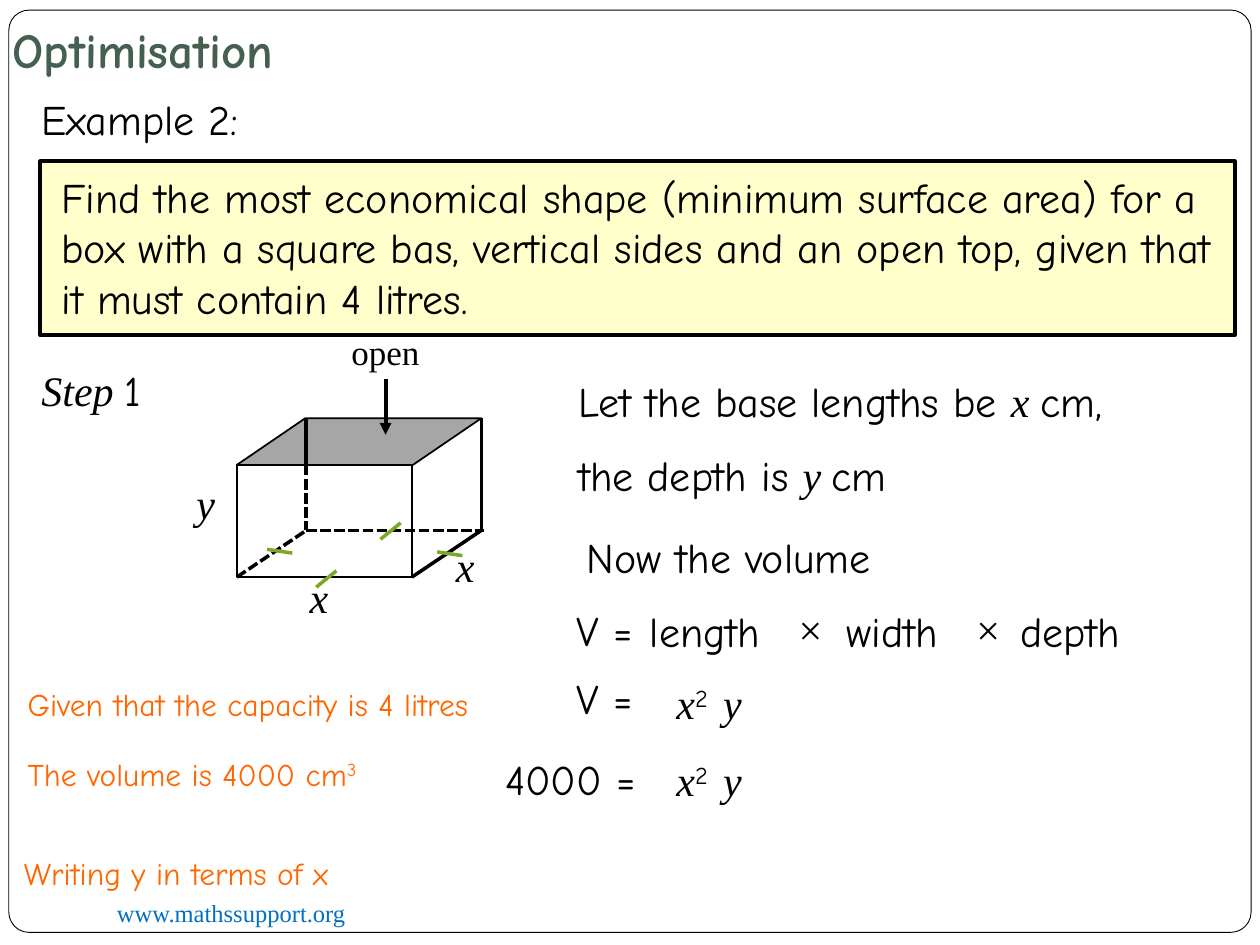
import pptx
import pptx.util
import pptx.dml.color
import pptx.enum.dml
import pptx.enum.shapes
import pptx.enum.text
import pptx.oxml
import pptx.oxml.ns

PX = 9144  # 100 px to the inch
SHAPES = pptx.enum.shapes.MSO_SHAPE
COLOURS = {"ink": "000000", "paper": "FFFFFF", "title": "455F51", "note": "FF6600",
           "link": "0070C0", "problem": "FFFFCC", "lid": "A6A6A6", "tick": "7CA827"}
PLAIN, SERIF = "Comic Neue", "Times New Roman"
STYLES = {
    "title": ({"name": PLAIN, "size": 28, "bold": True}, "title"),
    "plain": ({"name": PLAIN, "size": 24}, "ink"),
    "power": ({"name": PLAIN, "size": 24}, "ink"),
    "maths": ({"name": SERIF, "size": 24, "italic": True}, "ink"),
    "times": ({"name": SERIF, "size": 24}, "ink"),
    "label": ({"name": SERIF, "size": 20}, "ink"),
    "note": ({"name": PLAIN, "size": 18}, "note"),
    "note power": ({"name": PLAIN, "size": 18}, "note"),
    "link": ({"name": SERIF, "size": 14}, "link"),
}


def colour(name):
    return pptx.dml.color.RGBColor.from_string(COLOURS[name])


def emu(*lengths):
    return [pptx.util.Emu(length * PX) for length in lengths]


def write(frame, *spans):
    """Fill the first paragraph with (words, style) pairs."""
    para = frame.paragraphs[0]
    para.alignment = pptx.enum.text.PP_ALIGN.LEFT
    for words, style in spans:
        span = para.add_run()
        span.text = words
        formats, ink = STYLES[style]
        for name, value in formats.items():
            setattr(span.font, name, pptx.util.Pt(value) if name == "size" else value)
        span.font.color.rgb = colour(ink)
        if style.endswith("power"):
            span.font._element.set("baseline", "30000")


def add_text(page, left, top, width, height, *spans, wrap=True):
    box = page.shapes.add_textbox(*emu(left, top, width, height))
    box.text_frame.word_wrap = wrap
    write(box.text_frame, *spans)
    return box


def add_block(page, kind, box, fill, weight):
    block = page.shapes.add_shape(kind, *emu(*box))
    block.shadow.inherit = False
    if fill:
        block.fill.solid()
        block.fill.fore_color.rgb = colour(fill)
    else:
        block.fill.background()
    block.line.color.rgb = colour("ink")
    block.line.width = pptx.util.Pt(weight)
    return block


def add_line(page, x1, y1, x2, y2, ink="ink", weight=2, dashed=False, arrow=False):
    line = page.shapes.add_connector(
        pptx.enum.shapes.MSO_CONNECTOR.STRAIGHT, *emu(x1, y1, x2, y2))
    line.line.color.rgb = colour(ink)
    line.line.width = pptx.util.Pt(weight)
    if dashed:
        line.line.dash_style = pptx.enum.dml.MSO_LINE.SQUARE_DOT
    if arrow:
        pptx.oxml.ns.qn("a:tailEnd")
        tail = pptx.oxml.parse_xml(
            '<a:tailEnd %s type="triangle"/>' % pptx.oxml.ns.nsdecls("a"))
        line.line._get_or_add_ln().append(tail)
    line._element.spPr.append(
        pptx.oxml.parse_xml("<a:effectLst %s/>" % pptx.oxml.ns.nsdecls("a")))


def add_frame(page, left, top, width, height):
    # Rounded page border and web address
    border = add_block(page, SHAPES.ROUNDED_RECTANGLE, (left, top, width, height), "paper", 0.5)
    border.adjustments[0] = 0.022
    add_text(page, left + 76, top + 700, 325, 34, ("www.mathssupport.org", "link"))


def add_heading(page, left, top, width, height):
    title = page.shapes.title
    places = zip(("left", "top", "width", "height"), emu(left, top, width, height))
    for name, value in places:
        setattr(title, name, value)
    frame = title.text_frame
    frame.vertical_anchor = pptx.enum.text.MSO_ANCHOR.BOTTOM
    frame.margin_bottom = emu(10)[0]
    write(frame, ("Optimisation", "title"))
    # The title belongs in front of the border
    page.shapes._spTree.append(title._element)


def add_problem(page, left, top, width, height):
    add_text(page, left - 9, top - 59, 582, 50, ("Example 2:", "plain"))
    add_block(page, SHAPES.RECTANGLE, (left, top, width, height), "problem", 2.25)
    add_text(page, left + 7, top + 3, width - 15, height - 7,
             ("Find the most economical shape (minimum surface area) for a box with "
              "a square bas, vertical sides and an open top, given that it must "
              "contain 4 litres.", "plain"))


def add_open_box(page, left, top, width, height):
    """Open box: a front face, set back by depth and rise."""
    depth, rise = 55, 37
    front = width - depth
    right, bottom = left + width, top + height
    back, floor = left + depth, bottom - rise

    # Lid and front face
    lid = add_block(page, SHAPES.PARALLELOGRAM, (left, top, width, rise), "lid", 1)
    lid.adjustments[0] = 1.466
    add_block(page, SHAPES.RECTANGLE, (left, top + rise, front, height - rise), None, 1)

    # Edges, hidden ones dashed
    add_line(page, left + front, bottom, right, floor)
    add_line(page, right, top, right, floor)
    add_line(page, back, top, back, top + rise)
    for edge in ((left, bottom, back, floor), (back, floor, right + 2, floor),
                 (back, top + rise, back, floor)):
        add_line(page, *edge, dashed=True)

    # Equal-length ticks
    for x, y in ((left + 63, bottom + 8), (left + 114, floor + 7)):
        add_line(page, x + 16, y - 13, x, y, "tick")
    for x, y in ((left + 159, bottom - 20), (left + 24, bottom - 22)):
        add_line(page, x, y, x + 20, y + 3, "tick")

    # Labels and the arrow to the opening
    for letter, x, y in (("y", -42, 42), ("x", 48, 117), ("x", 164, 92)):
        add_text(page, left + x, top + y, 35, 50, (letter, "maths"), wrap=False)
    add_text(page, left + 81, top - 75, 75, 44, ("open", "label"), wrap=False)
    add_line(page, left + 118, top - 31, left + 118, top + 13, weight=2.25, arrow=True)


def add_working(page, left, top):
    # Variables
    add_text(page, left, top, 530, 50, ("Let the base lengths be ", "plain"),
             ("x ", "maths"), ("cm,", "plain"))
    add_text(page, left, top + 59, 322, 50, ("the depth is ", "plain"),
             ("y ", "maths"), ("cm", "plain"))
    add_text(page, left + 7, top + 124, 310, 50, ("Now the volume", "plain"))

    # Volume in words
    row = top + 183
    add_text(page, left - 1, row - 1, 82, 50, ("V =", "plain"))
    for word, x in (("length", 57), ("width", 213), ("depth", 351)):
        add_text(page, left + x, row, 128, 50, (word, "plain"))
    for x in (175, 316):
        add_text(page, left + x, row - 2, 39, 50, ("×", "times"), wrap=False)

    # Volume in symbols
    for value, x, width, y in (("V =", -1, 82, 236), ("4000 =", -58, 131, 300)):
        add_text(page, left + x, top + y, width, 50, (value, "plain"))
    for y in (240, 301):
        add_text(page, left + 78, top + y, 52, 50, ("x", "maths"), ("2", "power"))
        add_text(page, left + 115, top + y, 52, 50, ("y", "maths"))


def add_notes(page, left, top):
    add_text(page, left, top, 448, 40, ("Given that the capacity is 4 litres", "note"))
    add_text(page, left, top + 55, 448, 40, ("The volume is 4000 cm", "note"),
             ("3", "note power"))
    add_text(page, left - 3, top + 134, 448, 40, ("Writing y in terms of x", "note"))


def main():
    deck = pptx.Presentation()
    deck.slide_width, deck.slide_height = emu(1000, 750)
    page = deck.slides.add_slide(deck.slide_layouts.get_by_name("Title Only"))
    add_frame(page, 7, 8, 986, 732)
    add_heading(page, 0, 5, 850, 67)
    add_problem(page, 32, 128, 948, 138)
    add_text(page, 23, 284, 102, 50, ("Step ", "maths"), ("1", "plain"), wrap=False)
    add_open_box(page, 188, 332, 194, 126)
    add_working(page, 449, 293)
    add_notes(page, 12, 539)
    deck.save("out.pptx")


if __name__ == "__main__":
    main()
